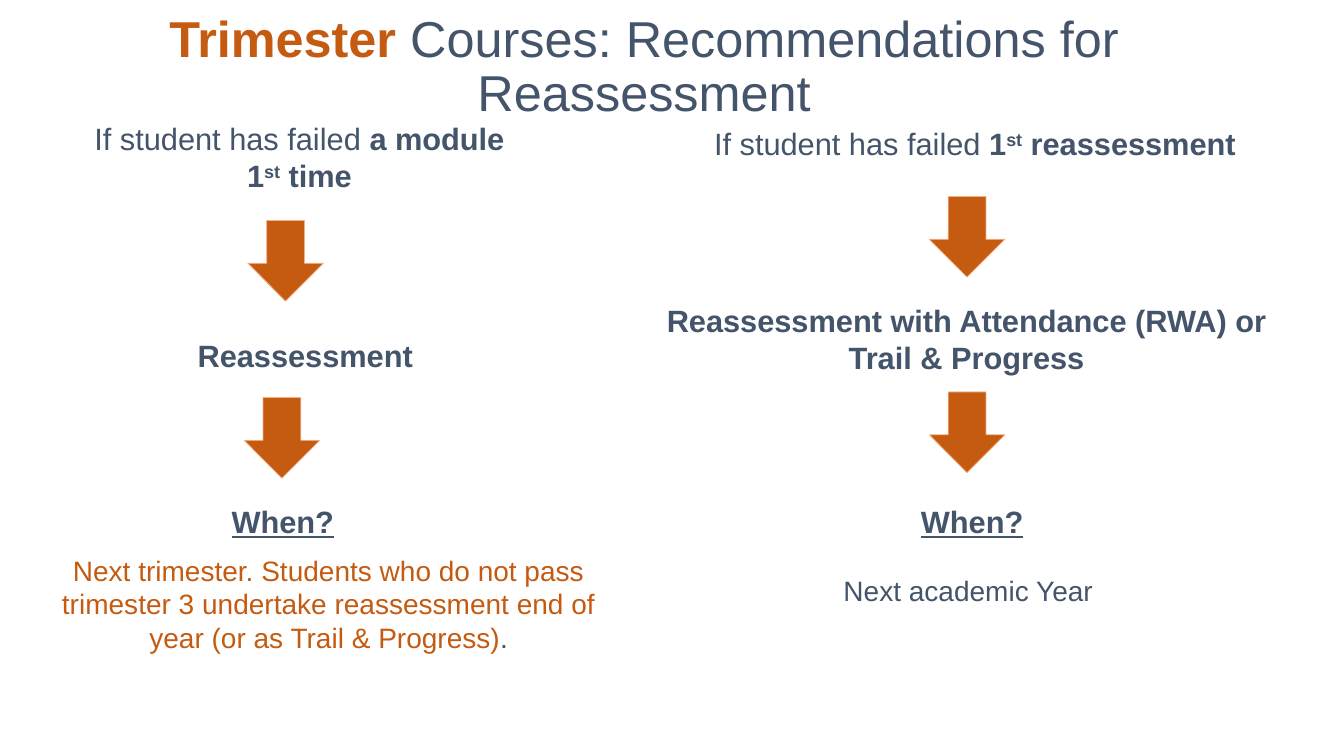
from pptx import Presentation
from pptx.dml.color import RGBColor
from pptx.enum.shapes import MSO_SHAPE
from pptx.enum.text import MSO_ANCHOR, MSO_AUTO_SIZE, PP_ALIGN
from pptx.util import Pt

DOWN_ARROW = MSO_SHAPE.DOWN_ARROW
CENTER, LEFT = PP_ALIGN.CENTER, PP_ALIGN.LEFT
MIDDLE, TOP = MSO_ANCHOR.MIDDLE, MSO_ANCHOR.TOP
NO_AUTOFIT = MSO_AUTO_SIZE.NONE

COLORS = {"slate": "44546A", "orange": "C55A11", "peach": "F4B183"}
FONT = "Arial"
TITLE_LAYOUT = 5
ARROW_SIZE = (54, 57.6)
WIDE_INSETS = (9.36, 5.04)
NARROW_INSETS = (7.2, 3.6)


def rgb(name):
    return RGBColor.from_string(COLORS[name])


def add_runs(paragraph, runs, size, align=CENTER):
    """Add (text, style words) runs; words are bold, underline, super, orange."""
    paragraph.alignment = align
    for text, style in runs:
        run = paragraph.add_run()
        run.text = text
        font = run.font
        font.name = FONT
        font.size = Pt(size)
        font.bold = "bold" in style
        font.underline = "underline" in style
        font.color.rgb = rgb("orange" if "orange" in style else "slate")
        if "super" in style:
            run._r.get_or_add_rPr().set("baseline", "30000")


def set_frame(frame, insets, anchor=TOP):
    frame.word_wrap = True
    frame.auto_size = NO_AUTOFIT
    frame.vertical_anchor = anchor
    frame.margin_left = frame.margin_right = Pt(insets[0])
    frame.margin_top = frame.margin_bottom = Pt(insets[1])


def add_title(slide):
    title = slide.shapes.title
    title.left, title.top, title.width, title.height = map(Pt, (8.6, 3.6, 903, 90))
    set_frame(title.text_frame, NARROW_INSETS, MIDDLE)
    heading = title.text_frame.paragraphs[0]
    heading.line_spacing = 0.9
    add_runs(heading, [("Trimester ", "bold orange"),
                       ("Courses: Recommendations for Reassessment", "")], 36)


def add_text(slide, box, runs, size=22, align=CENTER, insets=WIDE_INSETS):
    frame = slide.shapes.add_textbox(*map(Pt, box)).text_frame
    set_frame(frame, insets)
    add_runs(frame.paragraphs[0], runs, size, align)
    return frame


def add_arrow(slide, left, top):
    arrow = slide.shapes.add_shape(DOWN_ARROW, Pt(left), Pt(top), *map(Pt, ARROW_SIZE))
    arrow.shadow.inherit = False
    arrow.fill.solid()
    arrow.fill.fore_color.rgb = rgb("orange")
    arrow.line.color.rgb = rgb("peach")
    arrow.line.width = Pt(0.5)


def add_first_failure(slide):
    add_text(slide, (50.4, 80.6, 327, 65.5),
             [("If student has failed ", ""), ("a module 1", "bold"),
              ("st", "bold super"), (" time", "bold")])
    add_arrow(slide, 177, 157.5)
    add_text(slide, (131.8, 235.4, 288, 48),
             [("Reassessment", "bold")], align=LEFT)
    add_arrow(slide, 174.4, 284)
    add_text(slide, (126, 354.2, 152, 20), [("When?", "bold underline")])
    add_text(slide, (13, 390.2, 443.5, 78.5),
             [("Next trimester. Students who do not pass trimester 3 undertake "
               "reassessment end of year (or as Trail & Progress)", "orange"),
              (".", "")], size=20)


def add_second_failure(slide):
    add_text(slide, (480.2, 84.2, 438.5, 62),
             [("If student has failed ", ""), ("1", "bold"),
              ("st", "bold super"), (" reassessment ", "bold")])
    add_arrow(slide, 663.8, 140.4)
    add_text(slide, (450.7, 211.7, 479.5, 60.5),
             [("Reassessment with Attendance (RWA) or Trail & Progress", "bold")],
             insets=NARROW_INSETS)
    add_arrow(slide, 663.8, 280)
    when = add_text(slide, (512.6, 354.2, 363.6, 41.8), [("When?", "bold underline")])
    answer = when.add_paragraph()
    answer.space_before = Pt(24)
    add_runs(answer, [("Next academic Year\u00a0", "")], 20)


def main():
    deck = Presentation()
    deck.slide_width, deck.slide_height = Pt(960), Pt(540)
    slide = deck.slides.add_slide(deck.slide_layouts[TITLE_LAYOUT])
    add_title(slide)
    add_first_failure(slide)
    add_second_failure(slide)
    deck.save("out.pptx")


if __name__ == "__main__":
    main()
